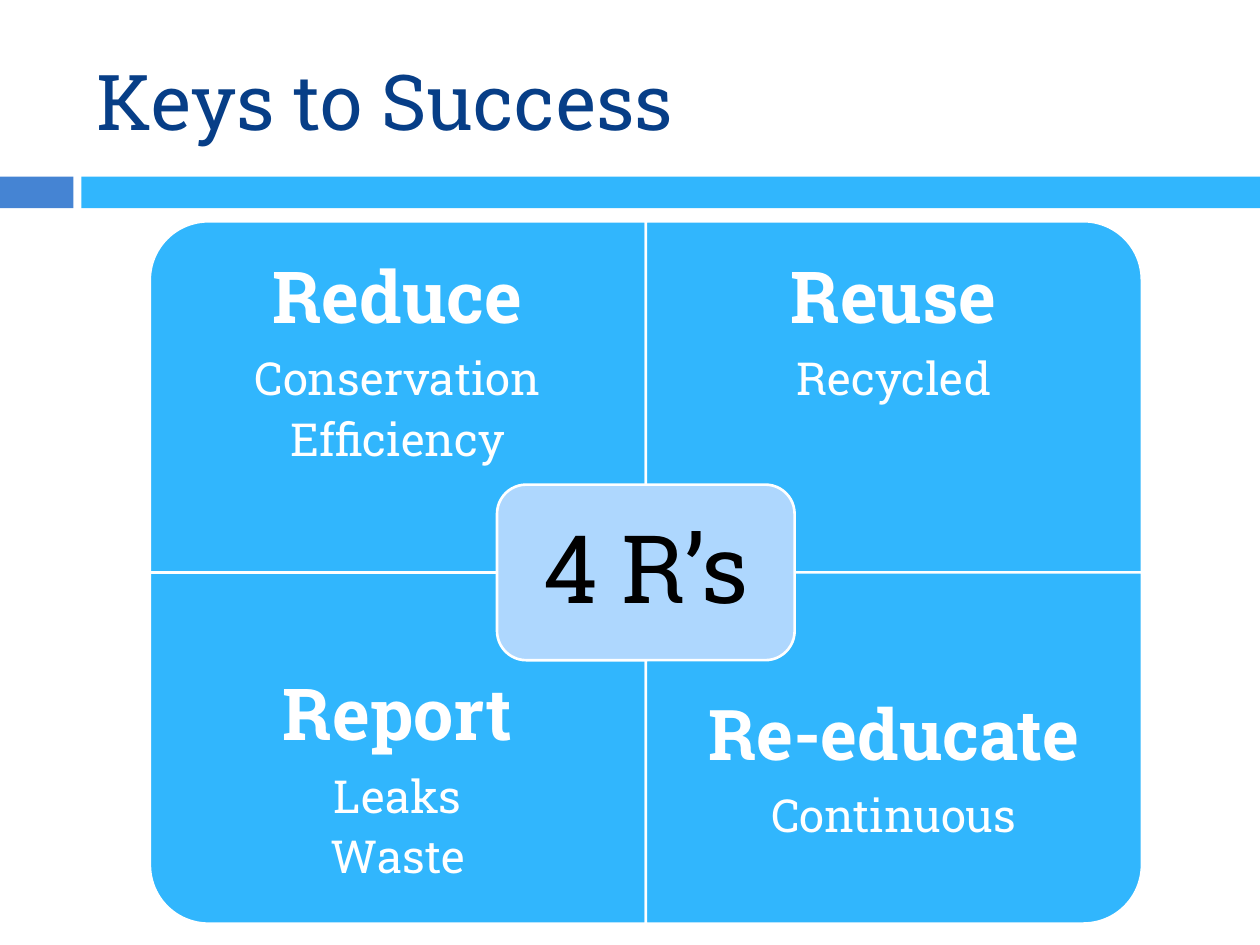
from pptx import Presentation
from pptx.dml.color import RGBColor
from pptx.enum.shapes import MSO_SHAPE as Kind
from pptx.enum.text import MSO_ANCHOR as Anchor, PP_ALIGN as Align
from pptx.util import Cm, Pt

NAVY = RGBColor(0x07, 0x3E, 0x87)
BLUE = RGBColor(0x45, 0x84, 0xD3)
SKY = RGBColor(0x31, 0xB6, 0xFD)
PALE = RGBColor(0xAE, 0xD7, 0xFE)
WHITE = RGBColor(0xFF, 0xFF, 0xFF)
BLACK = RGBColor(0, 0, 0)
FONT = "Roboto Slab"

deck = Presentation()
deck.slide_width, deck.slide_height = Cm(25.4), Cm(19.05)
slide = deck.slides.add_slide(deck.slide_layouts[6])


def add_box(kind, x, y, w, h, fill, edge=None):
    box = slide.shapes.add_shape(kind, Cm(x), Cm(y), Cm(w), Cm(h))
    box.shadow.inherit = False
    box.fill.solid()
    box.fill.fore_color.rgb = fill
    if edge:
        box.line.color.rgb = edge
        box.line.width = Pt(1.5)
    else:
        box.line.fill.background()
    return box


def add_text(x, y, w, h, lines, sizes, color, anchor, inset, align=Align.CENTER):
    frame = slide.shapes.add_textbox(Cm(x), Cm(y), Cm(w), Cm(h)).text_frame
    frame.word_wrap = True
    frame.vertical_anchor = anchor
    frame.margin_left = frame.margin_right = Cm(inset)
    frame.margin_top = frame.margin_bottom = Cm(inset)
    frame.text = "\n".join(lines)
    for i, para in enumerate(frame.paragraphs):
        size = sizes[min(i, 1)]
        para.alignment = align
        if align == Align.CENTER:
            para.line_spacing = 0.9
            para.space_after = Pt(round(size * 0.25, 1))
        font = para.runs[0].font
        font.name, font.size, font.color.rgb = FONT, Pt(size), color
        font.bold = i == 0 and len(lines) > 1


add_box(Kind.RECTANGLE, 0, 3.56, 1.48, 0.64, BLUE)
add_box(Kind.RECTANGLE, 1.64, 3.56, 23.76, 0.64, SKY)
add_text(1.7, 0.64, 22.66, 2.74, ["Keys to Success"], [44], NAVY, Anchor.MIDDLE, 0.25, Align.LEFT)

LEFT, TOP, WIDE, HIGH = 3.02, 4.46, 10, 7.08
TALL = HIGH * 0.75
cells = [
    (0, 0, 270, 41, Anchor.TOP, ["Reduce", "Conservation", "Efficiency"]),
    (1, 0, 0, 41, Anchor.TOP, ["Reuse", "Recycled"]),
    (0, 1, 180, 41, Anchor.BOTTOM, ["Report", "Leaks", "Waste"]),
    (1, 1, 90, 40, Anchor.TOP, ["Re-educate", "Continuous"]),
]
for col, row, turn, size, anchor, lines in cells:
    x, y = LEFT + col * WIDE, TOP + row * HIGH
    w, h = (HIGH, WIDE) if turn % 180 else (WIDE, HIGH)
    tile = add_box(Kind.ROUND_1_RECTANGLE, x + (WIDE - w) / 2, y + (HIGH - h) / 2, w, h, SKY, WHITE)
    tile.rotation = turn
    add_text(x, y + row * (HIGH - TALL), WIDE, TALL, lines, [size, 26], WHITE, anchor, 0.81)

w, h = WIDE * 0.6, HIGH / 2
x, y = LEFT + WIDE - w / 2, TOP + HIGH - h / 2
add_box(Kind.ROUNDED_RECTANGLE, x, y, w, h, PALE, WHITE)
add_text(x + 0.17, y + 0.17, w - 0.34, h - 0.34, ["4 R’s"], [54], BLACK, Anchor.MIDDLE, 0.58)

deck.save("out.pptx")
